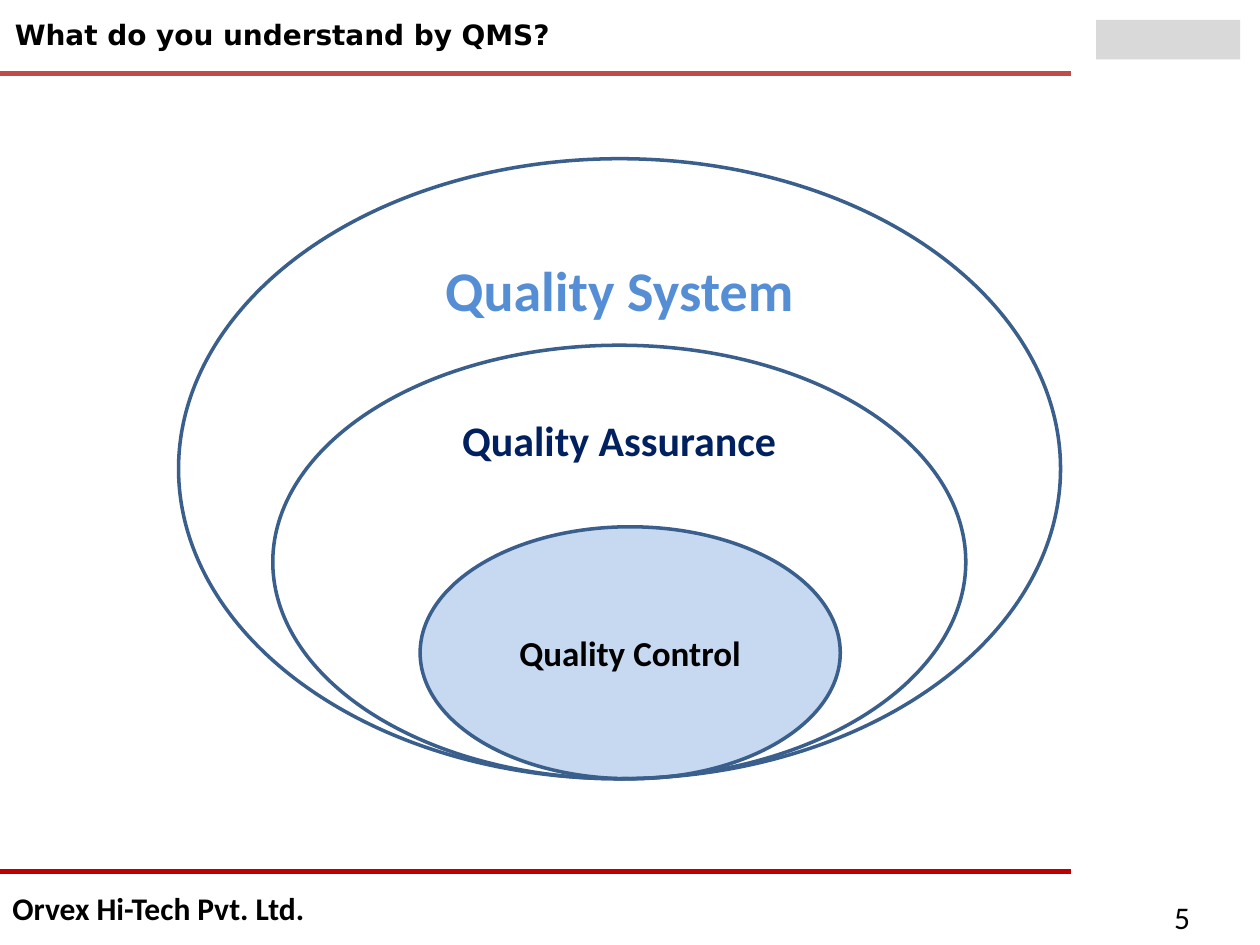
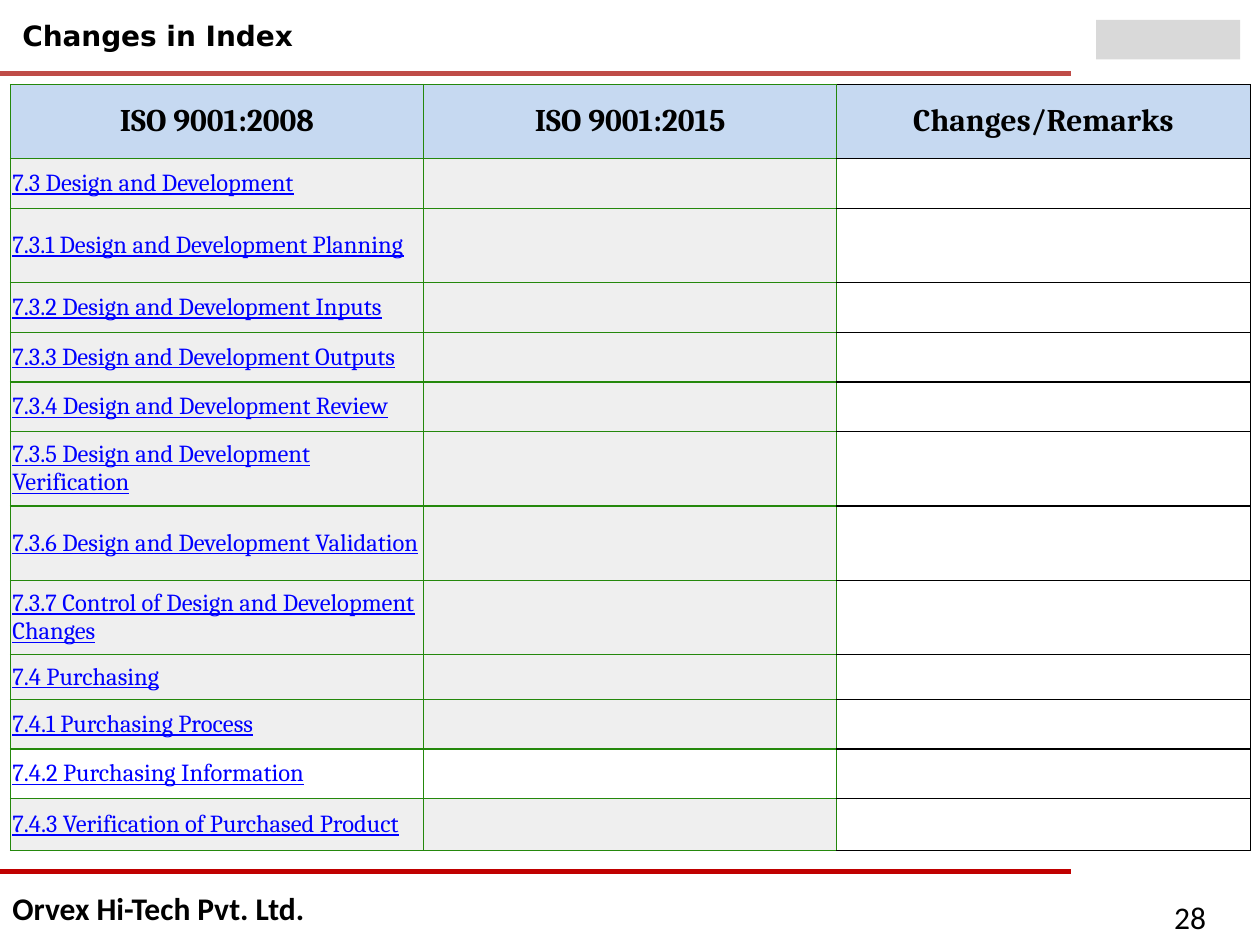
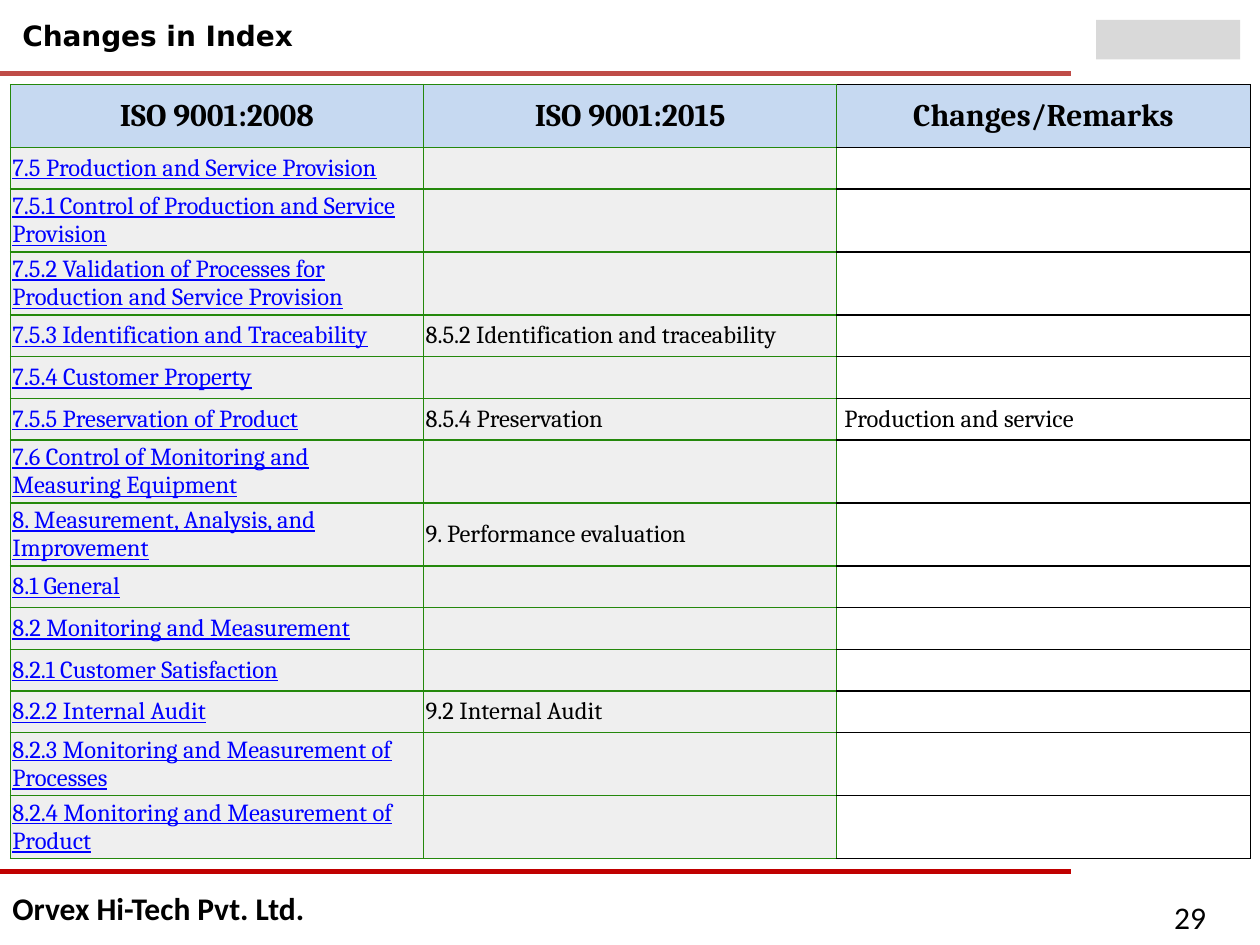
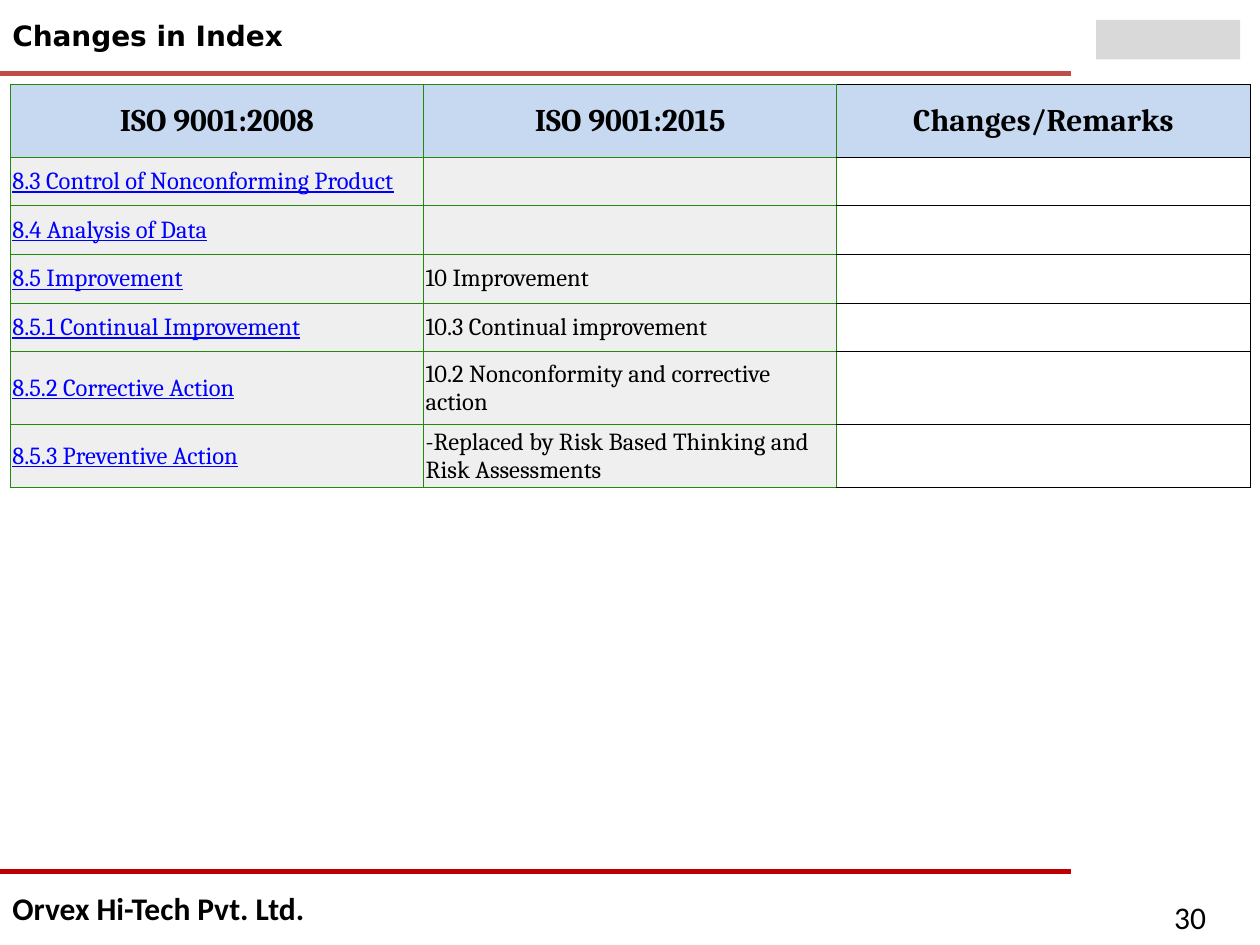
"""Builds four training slides on quality management systems."""
from lxml import etree
from pptx import Presentation
from pptx import util as u
from pptx.dml.color import RGBColor
from pptx.enum import shapes, text
from pptx.oxml.ns import qn

HUES = {
    "ink": "000000", "white": "FFFFFF", "top": "BF4C48", "foot": "C00000",
    "mark": "D9D9D9", "pale": "C6D9F1", "edge": "3A5F8C", "navy": "002060",
    "sky": "558ED5", "grey": "EFEFEF", "green": "24880C", "link": "0000FF",
}
MID = text.MSO_ANCHOR.MIDDLE
TOP = text.MSO_ANCHOR.TOP
CENTER = text.PP_ALIGN.CENTER
LEFT = text.PP_ALIGN.LEFT


def hue(name):
    return RGBColor.from_string(HUES[name])


def write(frame, words, size=18, face="Calibri", color="ink", bold=False,
          under=False, align=LEFT, anchor=TOP):
    frame.word_wrap = True
    frame.vertical_anchor = anchor
    para = frame.paragraphs[0]
    para.alignment = align
    if not words:
        para._p.get_or_add_endParaRPr().set("sz", str(size * 100))
        return
    run = para.add_run()
    run.text = words
    font = run.font
    font.size, font.name = u.Pt(size), face
    font.bold, font.underline = bold, under
    font.color.rgb = hue(color)


rings = [
    ("Quality Control", 8.47, 10.62, 8.47, 5.08, 20, "ink", "pale", MID),
    ("Quality Assurance", 5.5, 6.96, 13.97, 8.74, 24, "navy", None, TOP),
    ("Quality System", 3.6, 3.2, 17.78, 12.5, 32, "sky", None, TOP),
]
heads = ("ISO 9001:2008", "ISO 9001:2015", "Changes/Remarks")
design = [
    (1.5, *heads),
    (1, "7.3 Design and Development"),
    (1.5, "7.3.1 Design and Development Planning"),
    (1, "7.3.2 Design and Development Inputs"),
    (1, "7.3.3 Design and Development Outputs"),
    (1, "7.3.4 Design and Development Review"),
    (1.5, "7.3.5 Design and Development Verification"),
    (1.5, "7.3.6 Design and Development Validation"),
    (1.5, "7.3.7 Control of Design and Development Changes"),
    (0.9, "7.4 Purchasing"),
    (1, "7.4.1 Purchasing Process"),
    (1, "7.4.2 Purchasing Information"),
    (1.04, "7.4.3 Verification of Purchased Product"),
]
service = [
    (1.27, *heads),
    (0.84, "7.5 Production and Service Provision"),
    (1.27, "7.5.1 Control of Production and Service Provision"),
    (1.27, "7.5.2 Validation of Processes for Production and Service Provision"),
    (0.84, "7.5.3 Identification and Traceability",
     "8.5.2 Identification and traceability"),
    (0.84, "7.5.4 Customer Property"),
    (0.84, "7.5.5 Preservation of Product", "8.5.4 Preservation",
     "Production and service"),
    (1.27, "7.6 Control of Monitoring and Measuring Equipment"),
    (1.27, "8. Measurement, Analysis, and Improvement",
     "9. Performance evaluation"),
    (0.84, "8.1 General"),
    (0.84, "8.2 Monitoring and Measurement"),
    (0.84, "8.2.1 Customer Satisfaction"),
    (0.84, "8.2.2 Internal Audit", "9.2 Internal Audit"),
    (1.27, "8.2.3 Monitoring and Measurement of Processes"),
    (1.27, "8.2.4 Monitoring and Measurement of Product"),
]
improve = [
    (1.47, *heads),
    (0.98, "8.3 Control of Nonconforming Product"),
    (0.98, "8.4 Analysis of Data"),
    (0.98, "8.5 Improvement", "10 Improvement"),
    (0.98, "8.5.1 Continual Improvement", "10.3 Continual improvement"),
    (1.47, "8.5.2 Corrective Action",
     "10.2 Nonconformity and corrective action"),
    (1.27, "8.5.3 Preventive Action",
     "-Replaced by Risk Based Thinking and Risk Assessments"),
]
pages = [
    (5, "What do you understand by QMS?", 0.05, 0.23, None),
    (28, "Changes in Index", 0.2, 0.25, design),
    (29, "Changes in Index", 0.2, 0.25, service),
    (30, "Changes in Index", 0, 0.25, improve),
]

deck = Presentation()
deck.slide_width, deck.slide_height = u.Cm(25.4), u.Cm(19.05)

for number, title, left, top, rows in pages:
    slide = deck.slides.add_slide(deck.slide_layouts[6])
    parts = slide.shapes

    foot = parts.add_textbox(u.Cm(0), u.Cm(17.98), u.Cm(7.2), u.Cm(0.64))
    write(foot.text_frame, "Orvex Hi-Tech Pvt. Ltd.", bold=True, anchor=MID)
    for y, color in ((1.48, "top"), (17.57, "foot")):
        rule = parts.add_connector(shapes.MSO_CONNECTOR.STRAIGHT,
                                   u.Cm(0), u.Cm(y), u.Cm(21.6), u.Cm(y))
        rule.line.color.rgb = hue(color)
        rule.line.width = u.Pt(3)
        etree.SubElement(rule._element.spPr, qn("a:effectLst"))
    mark = parts.add_shape(shapes.MSO_SHAPE.RECTANGLE,
                           u.Cm(22.1), u.Cm(0.4), u.Cm(2.9), u.Cm(0.8))
    mark.shadow.inherit = False
    mark.fill.solid()
    mark.fill.fore_color.rgb = hue("mark")
    mark.line.fill.background()
    page = parts.add_textbox(u.Cm(23.42), u.Cm(17.98), u.Cm(1.95), u.Cm(1.02))
    write(page.text_frame, str(number))
    head = parts.add_textbox(u.Cm(left), u.Cm(top), u.Cm(13.7), u.Cm(0.94))
    write(head.text_frame, title, size=16, face="DejaVu Sans", bold=True)

    if rows is None:
        for words, x, y, wide, high, size, color, fill, anchor in rings:
            ring = parts.add_shape(shapes.MSO_SHAPE.OVAL,
                                   u.Cm(x), u.Cm(y), u.Cm(wide), u.Cm(high))
            ring.shadow.inherit = False
            if fill:
                ring.fill.solid()
                ring.fill.fore_color.rgb = hue(fill)
            else:
                ring.fill.background()
            ring.line.color.rgb = hue("edge")
            ring.line.width = u.Pt(2)
            write(ring.text_frame, words, size=size, color=color, bold=True,
                  align=CENTER, anchor=anchor)
        continue

    total = sum(row[0] for row in rows)
    grid = parts.add_table(len(rows), 3, u.Cm(0.21), u.Cm(1.7),
                           u.Cm(25), u.Cm(total)).table
    grid.first_row = grid.horz_banding = False
    for col in grid.columns:
        col.width = u.Cm(8.33)
    for r, (high, *words) in enumerate(rows):
        grid.rows[r].height = u.Cm(high)
        words += [""] * (3 - len(words))
        for c, word in enumerate(words):
            cell = grid.cell(r, c)
            last = c == 2
            cell.margin_left = cell.margin_right = u.Cm(0.15 if last else 0.04)
            cell.margin_top = cell.margin_bottom = u.Cm(0.08 if last else 0.04)
            cell.vertical_anchor = MID
            props = cell._tc.get_or_add_tcPr()
            for side in "LRTB":
                edge = etree.SubElement(props, qn("a:ln" + side), w="9525")
                paint = etree.SubElement(edge, qn("a:solidFill"))
                color = "ink" if last and side != "L" else "green"
                etree.SubElement(paint, qn("a:srgbClr"), val=HUES[color])
            if r and last:
                cell.fill.background()
            else:
                plain = words[0].startswith("7.4.2")
                fill = "pale" if r == 0 else "white" if plain else "grey"
                cell.fill.solid()
                cell.fill.fore_color.rgb = hue(fill)
            link = r > 0 and c == 0
            write(cell.text_frame, word, size=14 if r else 18, face="Cambria",
                  color="link" if link else "ink", bold=r == 0, under=link,
                  align=LEFT if r else CENTER, anchor=MID)

deck.save("out.pptx")
